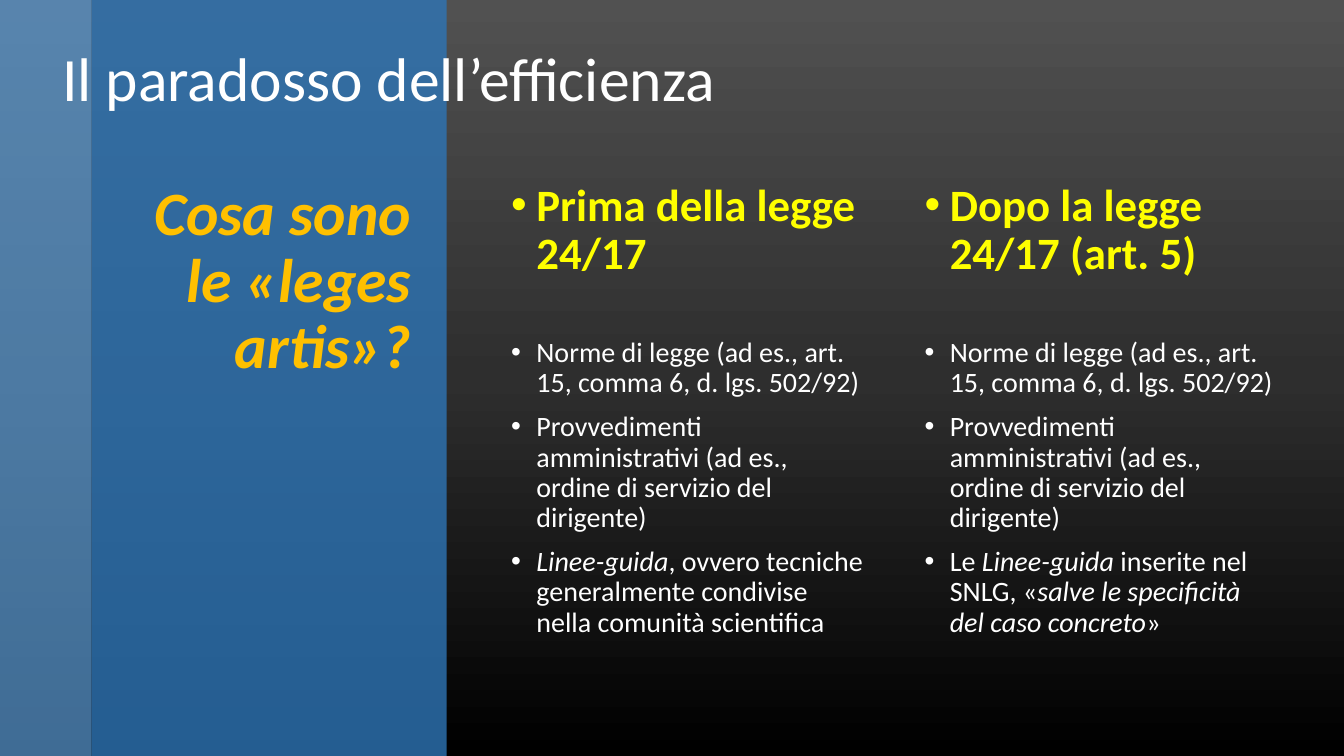
from copy import deepcopy

from lxml import etree
from pptx import Presentation
from pptx.dml.color import RGBColor
from pptx.enum.shapes import MSO_SHAPE
from pptx.enum.text import MSO_ANCHOR, MSO_AUTO_SIZE, PP_ALIGN
from pptx.oxml.ns import qn
from pptx.util import Inches, Pt

RECT = MSO_SHAPE.RECTANGLE
TOP = MSO_ANCHOR.TOP
FIXED, GROW = MSO_AUTO_SIZE.NONE, MSO_AUTO_SIZE.SHAPE_TO_FIT_TEXT
RIGHT = PP_ALIGN.RIGHT

WHITE = RGBColor(0xFF, 0xFF, 0xFF)
YELLOW = RGBColor(0xFF, 0xFF, 0x00)
GOLD = RGBColor(0xFF, 0xC0, 0x00)
SKY = RGBColor(0x5B, 0x9B, 0xD5)
BLUE = RGBColor(0x2E, 0x75, 0xB6)
SHADES = [RGBColor(0x51, 0x51, 0x51), RGBColor(0x2E, 0x2E, 0x2E),
          RGBColor(0, 0, 0)]

FONT = "Calibri"
COLUMN_TOP, COLUMN_HIGH = 1.76, 4.92

SHARED = [
    [("Norme di legge (ad es., art. 15, comma 6, d. lgs. 502/92)", False)],
    [("Provvedimenti amministrativi (ad es., ordine di servizio del "
      "dirigente)", False)],
]
BEFORE = SHARED + [
    [("Linee-guida", True),
     (", ovvero tecniche generalmente condivise nella comunità scientifica",
      False)],
]
AFTER = SHARED + [
    [("Le ", False), ("Linee-guida", True), (" inserite nel SNLG, «", False),
     ("salve le specificità del caso concreto", True), ("»", False)],
]


def write(para, text, size=20, color=WHITE, bold=False, italic=False):
    """Add one formatted run to a paragraph."""
    run = para.add_run()
    run.text = text
    font = run.font
    font.name, font.size = FONT, Pt(size)
    font.bold, font.italic = bold, italic
    font.color.rgb = color


def place(shape, box):
    """Move a placeholder to its box and return its text frame."""
    shape.left, shape.top, shape.width, shape.height = map(Inches, box)
    frame = shape.text_frame
    frame.word_wrap = True
    frame.auto_size = FIXED
    frame.vertical_anchor = TOP
    return frame


def backdrop(slide):
    """Dark gradient running from top to bottom."""
    fill = slide.background.fill
    fill.gradient()
    fill.gradient_angle = 270
    first = fill.gradient_stops[0]._gs
    first.addnext(deepcopy(first))
    for i, (stop, shade) in enumerate(zip(fill.gradient_stops, SHADES)):
        stop.position = i / 2
        stop.color.rgb = shade


def band(slide, box, color, opacity):
    """Translucent vertical band."""
    shape = slide.shapes.add_shape(RECT, *map(Inches, box))
    shape.shadow.inherit = False
    shape.line.fill.background()
    shape.fill.solid()
    shape.fill.fore_color.rgb = color
    tint = shape._element.spPr.find(qn("a:solidFill"))[0]
    etree.SubElement(tint, qn("a:alpha"), val=str(opacity * 1000))
    # Bands lie behind the placeholders
    return shape._element


def question(shape, box):
    """Right-aligned question on the blue band."""
    para = place(shape, box).paragraphs[0]
    para.alignment = RIGHT
    para.line_spacing = 0.9
    write(para, "Cosa sono le «leges artis»?", size=44, color=GOLD,
          bold=True, italic=True)


def bullet(para, before=10):
    """Set the spacing and hanging indent of a list item."""
    para.line_spacing = 0.9
    para.space_before = Pt(before)
    props = para._p.get_or_add_pPr()
    props.set("marL", str(Inches(0.25)))
    props.set("indent", str(-Inches(0.25)))


def column(shape, box, head, items):
    """Yellow heading above a list of sources."""
    frame = place(shape, box)
    para = frame.paragraphs[0]
    bullet(para)
    write(para, head, size=32, color=YELLOW, bold=True)
    for i, item in enumerate(items):
        para = frame.add_paragraph()
        bullet(para, before=10 if i else 42)
        for text, italic in item:
            write(para, text, italic=italic)


def heading(slide, box):
    """Slide heading across the bands."""
    frame = slide.shapes.add_textbox(*map(Inches, box)).text_frame
    frame.word_wrap = True
    frame.auto_size = GROW
    write(frame.paragraphs[0], "Il paradosso dell’efficienza", size=44)


def main():
    deck = Presentation()
    deck.slide_width, deck.slide_height = Inches(13.33), Inches(7.5)
    slide = deck.slides.add_slide(deck.slide_layouts[3])
    title, left, right = slide.placeholders

    backdrop(slide)
    bands = [band(slide, (0, 0, 0.91, 7.5), SKY, 70),
             band(slide, (0.91, 0, 3.52, 7.5), BLUE, 80)]
    for item in bands:
        title._element.addprevious(item)

    question(title, (1.09, COLUMN_TOP, 3.09, COLUMN_HIGH))
    column(left, (4.97, COLUMN_TOP, 3.74, COLUMN_HIGH),
           "Prima della legge 24/17", BEFORE)
    column(right, (9.07, COLUMN_TOP, 3.74, COLUMN_HIGH),
           "Dopo la legge 24/17 (art. 5)", AFTER)
    heading(slide, (0.52, 0.35, 7.61, 0.84))
    deck.save("out.pptx")


if __name__ == "__main__":
    main()
